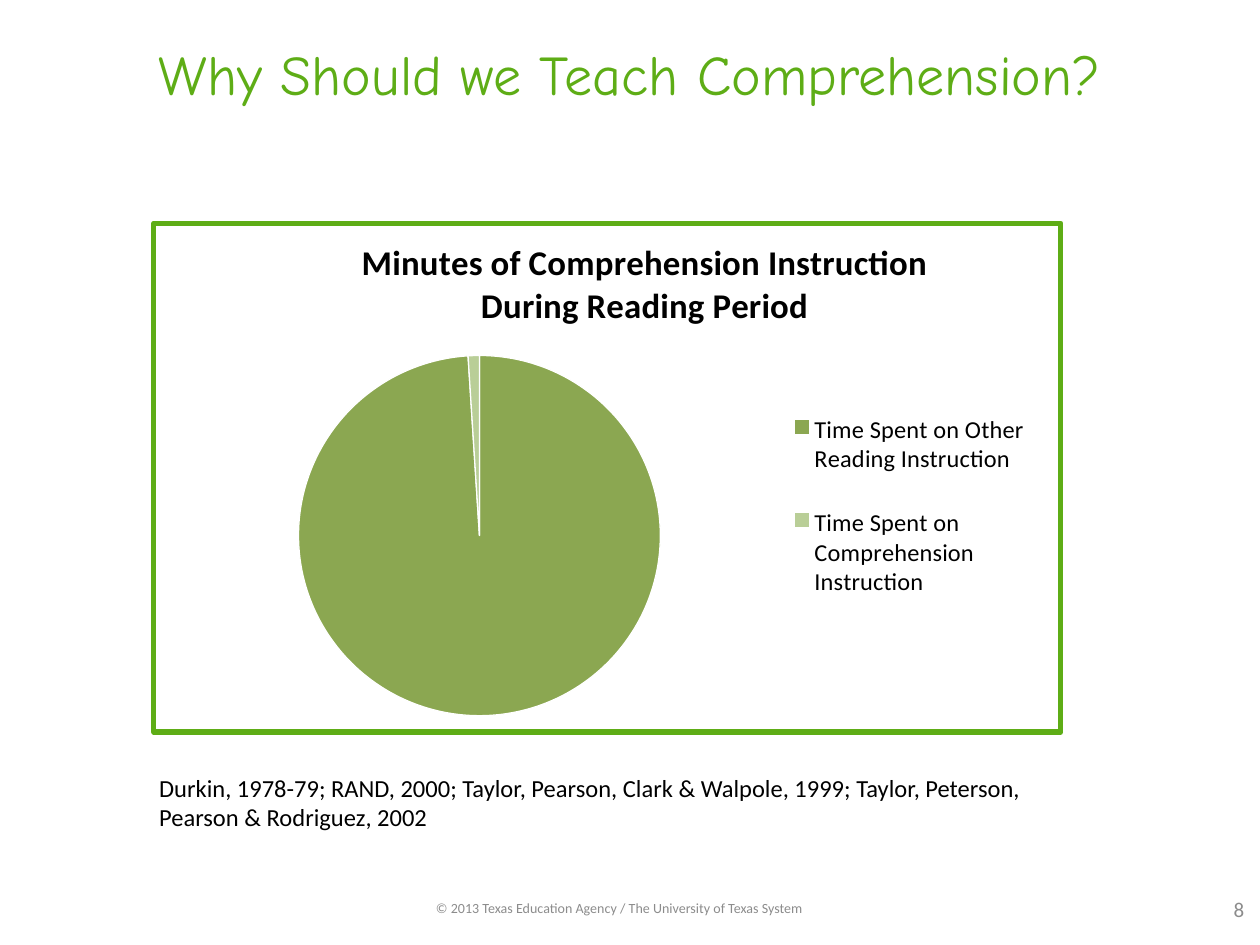
"""Build the slide on time spent teaching comprehension."""
from dataclasses import dataclass

from lxml import etree
from pptx import Presentation
from pptx import util as u
from pptx.chart.data import CategoryChartData
from pptx.dml.color import RGBColor
from pptx.enum import chart as charts, text
from pptx.oxml import parse_xml
from pptx.oxml.ns import nsdecls, qn

WIDTH, HEIGHT = u.Inches(10), u.Inches(7.5)


@dataclass(frozen=True)
class Theme:
    green: str = "5EAD16"
    black: str = "000000"
    gray: str = "8C8C8C"
    white: str = "FFFFFF"
    slices: tuple[str, ...] = ("8BA751", "B9CE97")
    title_font: str = "Comic Neue"
    body_font: str = "Calibri"
    title: int = 32
    chart_title: int = 20
    body: int = 14
    number: int = 12
    chart: int = 10
    footer: int = 8
    border: float = 3
    wedge_line: float = 0.75


@dataclass(frozen=True)
class Area:
    """Left, top, width and height in percent of the surrounding frame."""
    left: float
    top: float
    width: float = 0
    height: float = 0

    def lengths(self) -> tuple[int, int, int, int]:
        return (int(self.left * WIDTH / 100), int(self.top * HEIGHT / 100),
                int(self.width * WIDTH / 100), int(self.height * HEIGHT / 100))


@dataclass(frozen=True)
class Label:
    words: str
    area: Area
    size: int
    color: str
    align: text.PP_ALIGN = text.PP_ALIGN.CENTER
    anchor: text.MSO_ANCHOR = text.MSO_ANCHOR.MIDDLE
    font: str = Theme.body_font


THEME = Theme()
TITLE = Label("Why Should we Teach Comprehension?", Area(0, 2.2, 100, 11.1),
              THEME.title, THEME.green, font=THEME.title_font)
LABELS = (
    Label("Durkin, 1978-79; RAND, 2000; Taylor, Pearson, Clark & Walpole, 1999; "
          "Taylor, Peterson, Pearson & Rodriguez, 2002",
          Area(11.65, 81.1, 76.7, 7.6), THEME.body, THEME.black,
          text.PP_ALIGN.LEFT, text.MSO_ANCHOR.TOP),
    Label("© 2013 Texas Education Agency / The University of Texas System",
          Area(20.83, 94.4, 56.7, 3.3), THEME.footer, THEME.gray),
    Label("8", Area(95.83, 94.4, 5, 3.6), THEME.number, THEME.gray),
)
CHART_AREA = Area(12, 23.35, 72.4, 54.4)
PIE_AREA = Area(15.9, 26, 40, 70.8)
HEADING_AREA = Area(22.5, 2.4)
LEGEND_AREA = Area(69.3, 31.1, 28, 49)
HEADING = ("Minutes of Comprehension Instruction", "During Reading Period")
MINUTES = {"Time Spent on Other Reading Instruction": 99,
           "Time Spent on Comprehension Instruction": 1}


def style_font(font, size: int, color: str, name: str = THEME.body_font,
               bold: bool = False) -> None:
    font.size, font.name, font.bold = u.Pt(size), name, bold
    font.color.rgb = RGBColor.from_string(color)


def write_label(box, label: Label) -> None:
    box.left, box.top, box.width, box.height = label.area.lengths()
    frame = box.text_frame
    frame.word_wrap, frame.vertical_anchor = True, label.anchor
    frame.auto_size = text.MSO_AUTO_SIZE.NONE
    para = frame.paragraphs[0]
    para.text, para.alignment = label.words, label.align
    style_font(para.font, label.size, label.color, label.font)


def place_part(chart, tag: str, area: Area, after: str | None = None) -> None:
    part = chart.element.find(".//" + qn(tag))
    for layout in part.findall(qn("c:layout")):
        part.remove(layout)
    layout = parse_xml(f"<c:layout {nsdecls('c')}><c:manualLayout/></c:layout>")
    values = {} if after else {"layoutTarget": "inner"}
    values |= {"xMode": "edge", "yMode": "edge",
               "x": area.left / 100, "y": area.top / 100}
    if area.width:
        values |= {"w": area.width / 100, "h": area.height / 100}
    for name, value in values.items():
        etree.SubElement(layout[0], qn(f"c:{name}")).set("val", str(value))
    if after:
        part.find(qn(after)).addnext(layout)
    else:
        part.insert(0, layout)


def add_border(chart, color: str, points: float) -> None:
    border = parse_xml(
        f"<c:spPr {nsdecls('c', 'a')}><a:noFill/><a:ln w=\"{u.Pt(points)}\">"
        f"<a:solidFill><a:srgbClr val=\"{color}\"/></a:solidFill><a:round/>"
        "</a:ln></c:spPr>")
    chart.element.find(qn("c:chart")).addnext(border)


def add_pie(page) -> None:
    data = CategoryChartData()
    data.categories = list(MINUTES)
    data.add_series("Series 1", list(MINUTES.values()))
    chart = page.shapes.add_chart(charts.XL_CHART_TYPE.PIE,
                                  *CHART_AREA.lengths(), data).chart
    style_font(chart.font, THEME.chart, THEME.black)
    add_border(chart, THEME.green, THEME.border)

    chart.has_title = True
    frame = chart.chart_title.text_frame
    frame.text = "\n".join(HEADING)
    for para in frame.paragraphs:
        style_font(para.font, THEME.chart_title, THEME.black, bold=True)
    chart.has_legend = True
    chart.legend.position = charts.XL_LEGEND_POSITION.RIGHT
    chart.legend.include_in_layout = False
    style_font(chart.legend.font, THEME.body, THEME.black)

    plot = chart.plots[0]
    plot.vary_by_categories = True
    for index, color in enumerate(THEME.slices):
        wedge = plot.series[0].points[index].format
        wedge.fill.solid()
        wedge.fill.fore_color.rgb = RGBColor.from_string(color)
        wedge.line.color.rgb = RGBColor.from_string(THEME.white)
        wedge.line.width = u.Pt(THEME.wedge_line)

    place_part(chart, "c:plotArea", PIE_AREA)
    place_part(chart, "c:title", HEADING_AREA, after="c:tx")
    place_part(chart, "c:legend", LEGEND_AREA, after="c:legendPos")


def main() -> None:
    deck = Presentation()
    deck.slide_width, deck.slide_height = WIDTH, HEIGHT
    page = deck.slides.add_slide(deck.slide_layouts.get_by_name("Title Only"))
    write_label(page.shapes.title, TITLE)
    add_pie(page)
    for label in LABELS:
        write_label(page.shapes.add_textbox(*label.area.lengths()), label)
    deck.save("out.pptx")


if __name__ == "__main__":
    main()
